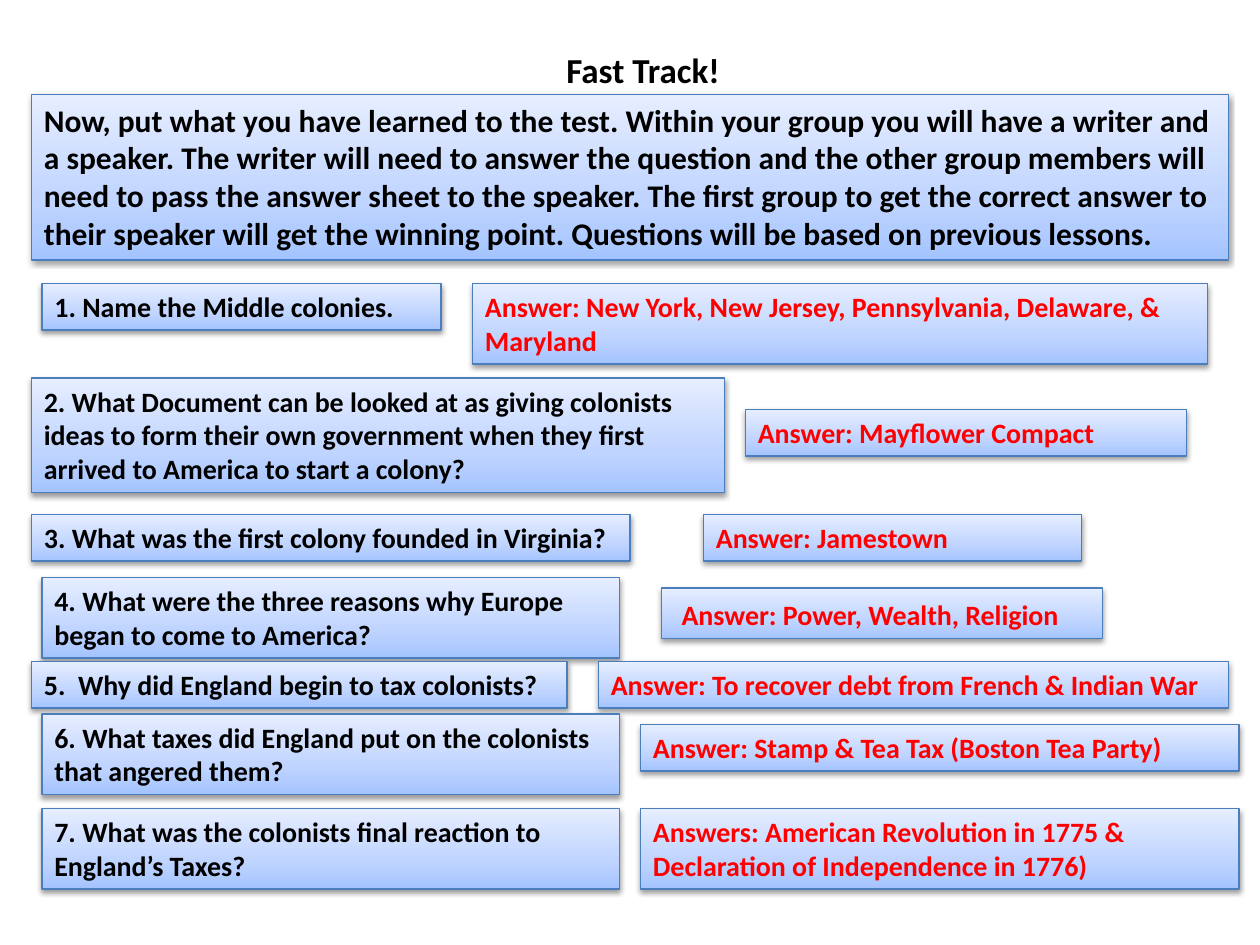
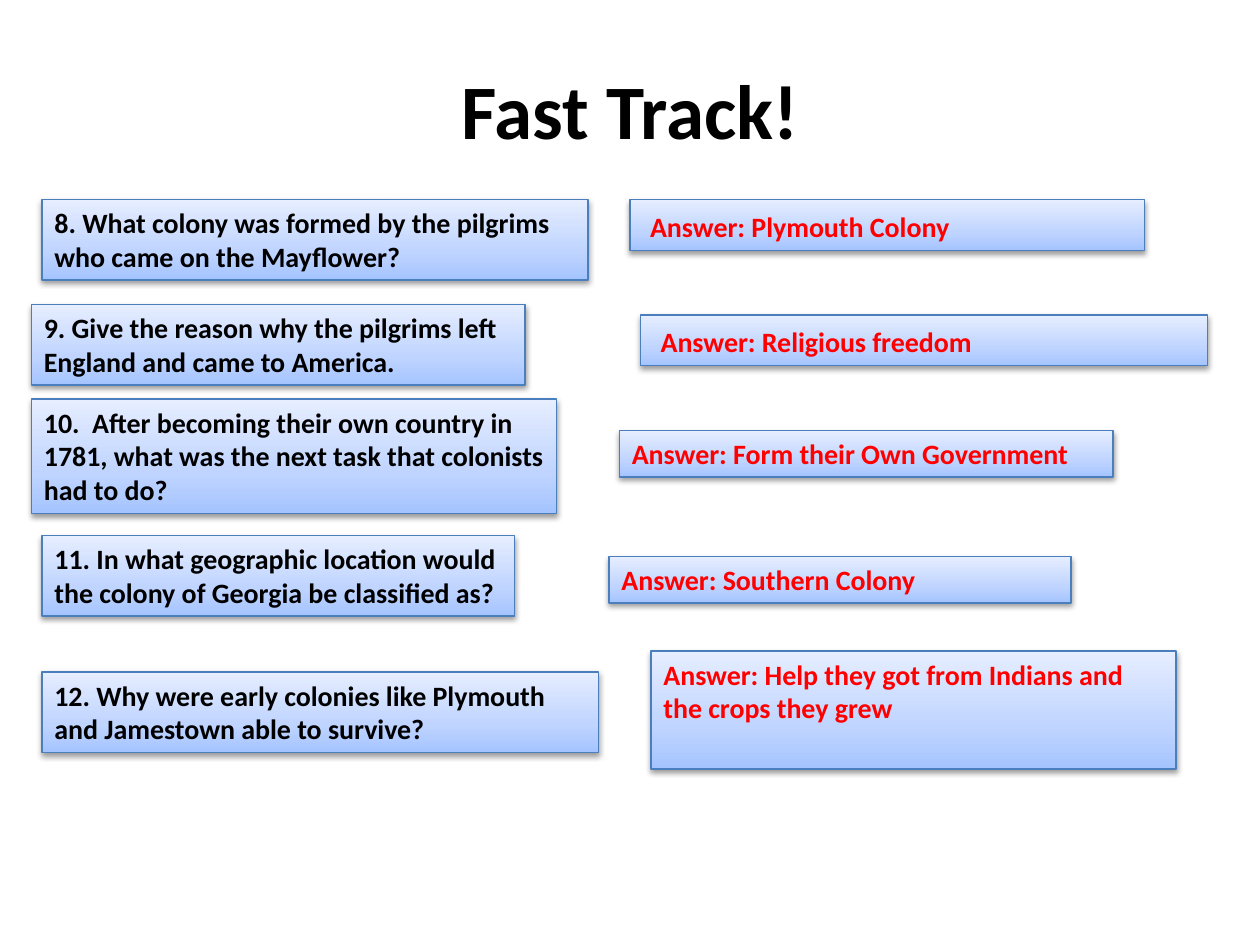
from copy import deepcopy

from pptx import Presentation
from pptx.dml.color import RGBColor
from pptx.enum.shapes import MSO_SHAPE
from pptx.enum.text import MSO_ANCHOR, MSO_AUTO_SIZE, PP_ALIGN
from pptx.oxml import parse_xml
from pptx.oxml.ns import nsdecls, qn
from pptx.util import Inches, Pt

RECT = MSO_SHAPE.RECTANGLE
TOP, MIDDLE = MSO_ANCHOR.TOP, MSO_ANCHOR.MIDDLE
FIXED = MSO_AUTO_SIZE.NONE
LEFT, CENTER = PP_ALIGN.LEFT, PP_ALIGN.CENTER

BLACK = RGBColor(0x00, 0x00, 0x00)
RED = RGBColor(0xFF, 0x00, 0x00)
EDGE = RGBColor(0x4B, 0x7E, 0xBC)
STOPS = [
    (0, RGBColor(0xA4, 0xC4, 0xFF)),
    (0.35, RGBColor(0xBF, 0xD4, 0xFF)),
    (1, RGBColor(0xE6, 0xEE, 0xFF)),
]
SHADOW = (
    f'<a:outerShdw {nsdecls("a")} blurRad="40000" dist="20000" dir="5400000" '
    'rotWithShape="0"><a:srgbClr val="000000"><a:alpha val="38000"/>'
    "</a:srgbClr></a:outerShdw>"
)

# The slide is a grid of square cells.
COLS, ROWS = 120, 90
CELL = Inches(10) / COLS
PAD = 1.2  # cells above and below the text of a card, together
LINE = 1.2 * 2.7 / 16  # cells of line height per point of type
FONT = "Calibri"
BODY = 16
INSET = {"margin_left": Inches(0.16), "margin_top": Inches(0.08)}
TITLE = "Fast Track!"
INTRO = (
    "Now, put what you have learned to the test. Within your group you will have "
    "a writer and a speaker. The writer will need to answer the question and the "
    "other group members will need to pass the answer sheet to the speaker. The "
    "first group to get the correct answer to their speaker will get the winning "
    "point. Questions will be based on previous lessons."
)

# Each pair: question and answer, both as (text, column, row, columns, lines);
# an answer may add True to have its text set further in.
FIRST = [
    (("1. Name the Middle colonies.", 4, 27, 38, 1),
     ("Answer: New York, New Jersey, Pennsylvania, Delaware, & Maryland",
      45, 27, 70, 2)),
    (("2. What Document can be looked at as giving colonists ideas to form their "
      "own government when they first arrived to America to start a colony?",
      3, 36, 66, 3),
     ("Answer: Mayflower Compact", 71, 39, 42, 1)),
    (("3. What was the first colony founded in Virginia?", 3, 49, 57, 1),
     ("Answer: Jamestown", 67, 49, 36, 1)),
    (("4. What were the three reasons why Europe began to come to America?",
      4, 55, 55, 2),
     ("Answer: Power, Wealth, Religion", 63, 56, 42, 1, True)),
    (("5.  Why did England begin to tax colonists?", 3, 63, 51, 1),
     ("Answer: To recover debt from French & Indian War", 57, 63, 60, 1)),
    (("6. What taxes did England put on the colonists that angered them?",
      4, 68, 55, 2),
     ("Answer: Stamp & Tea Tax (Boston Tea Party)", 61, 69, 57, 1)),
    (("7. What was the colonists final reaction to England’s Taxes?",
      4, 77, 55, 2),
     ("Answers: American Revolution in 1775 & Declaration of Independence in 1776)",
      61, 77, 57, 2)),
]
SECOND = [
    (("8. What colony was formed by the pilgrims who came on the Mayflower?",
      4, 19, 52, 2),
     ("Answer: Plymouth Colony", 60, 19, 49, 1, True)),
    (("9. Give the reason why the pilgrims left England and came to America.",
      3, 29, 47, 2),
     ("Answer: Religious freedom", 61, 30, 54, 1, True)),
    (("10.  After becoming their own country in 1781, what was the next task that "
      "colonists had to do?", 3, 38, 50, 3),
     ("Answer: Form their Own Government", 59, 41, 47, 1)),
    (("11. In what geographic location would the colony of Georgia be classified "
      "as?", 4, 51, 45, 2),
     ("Answer: Southern Colony", 58, 53, 44, 1)),
    (("12. Why were early colonies like Plymouth and Jamestown able to survive?",
      4, 64, 53, 2),
     ("Answer: Help they got from Indians and the crops they grew",
      62, 62, 50, 3.1)),
]


def cells(*counts):
    return [round(n * CELL) for n in counts]


def apply(thing, values):
    for name, value in values.items():
        setattr(thing, name, value)


def write(shape, text, size, color, align, anchor):
    frame = shape.text_frame
    frame.text = text
    apply(frame, {"word_wrap": True, "auto_size": FIXED, "vertical_anchor": anchor})
    para = frame.paragraphs[0]
    para.alignment = align
    font = para.runs[0].font
    apply(font, {"name": FONT, "size": Pt(size), "bold": True})
    font.color.rgb = color


def paint(shape):
    """Give a card its three-stop gradient, edge and soft shadow."""
    fill = shape.fill
    fill.gradient()
    fill.gradient_angle = 90
    props = shape._element.spPr
    stops = props.find(qn("a:gradFill")).find(qn("a:gsLst"))
    stops.insert(1, deepcopy(stops[0]))
    for stop, (place, color) in zip(fill.gradient_stops, STOPS):
        stop.position = place
        stop.color.rgb = color
    shape.line.color.rgb = EDGE
    shape.line.width = Pt(0.75)
    shape.shadow.inherit = False
    props.find(qn("a:effectLst")).append(parse_xml(SHADOW))


def card(slide, color, text, col, row, wide, lines, inset=False, size=BODY):
    """Draw a card that is as tall as its lines of text."""
    lead = size + 2 if inset else size
    box = cells(col, row, wide, PAD + lines * lead * LINE)
    shape = slide.shapes.add_shape(RECT, *box)
    paint(shape)
    write(shape, text, size, color, LEFT, TOP)
    if inset:
        apply(shape.text_frame, INSET)


def quiz(deck, pairs, box, size):
    """Add a slide with its title in the box and its pairs of cards."""
    slide = deck.slides.add_slide(deck.slide_layouts[5])
    title = slide.shapes.title
    apply(title, dict(zip(("left", "top", "width", "height"), cells(*box))))
    write(title, TITLE, size, BLACK, CENTER, MIDDLE)
    for ask, reply in pairs:
        card(slide, BLACK, *ask)
        card(slide, RED, *reply)
    return slide


def main():
    deck = Presentation()
    deck.slide_width, deck.slide_height = cells(COLS, ROWS)
    first = quiz(deck, FIRST, (36.25, 4, 50, 5.25), 20)
    card(first, BLACK, INTRO, 3, 9, 114, 4, size=18)
    quiz(deck, SECOND, (6, 3.6, 108, 13.5), 44)
    deck.save("out.pptx")


if __name__ == "__main__":
    main()
